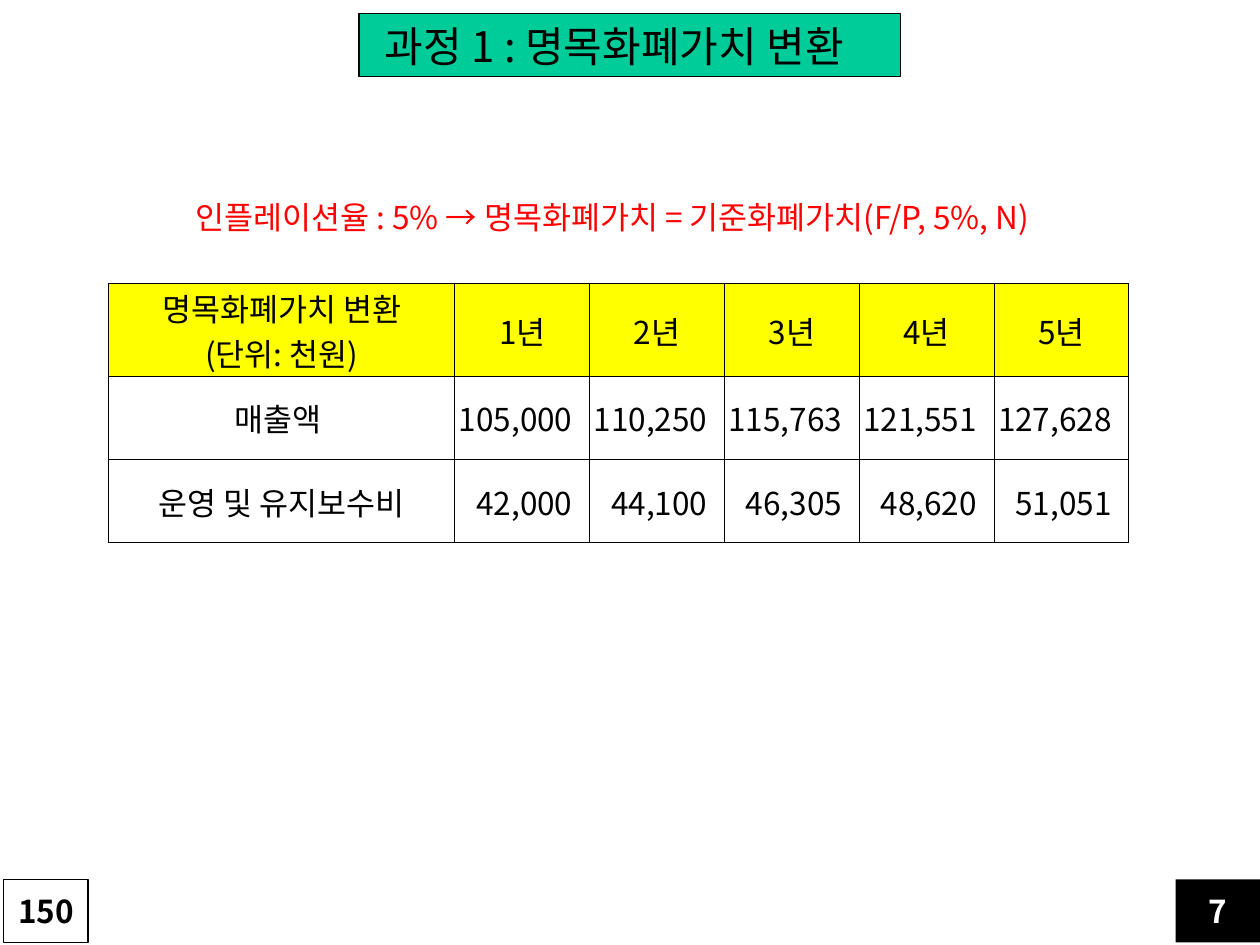
from dataclasses import dataclass
from typing import Optional

from pptx import Presentation
from pptx.dml.color import RGBColor
from pptx.enum import shapes, text
from pptx.oxml import parse_xml
from pptx.oxml.ns import nsdecls
from pptx.util import Inches, Pt


@dataclass(frozen=True)
class Theme:
    font: str = "Noto Sans CJK KR"
    black: str = "000000"
    white: str = "FFFFFF"
    red: str = "FF0000"
    green: str = "00CC99"
    yellow: str = "FFFF00"
    title_size: int = 24
    body_size: int = 18
    border: float = 0.5
    outline: float = 0.75


@dataclass(frozen=True)
class Badge:
    label: str
    left: float
    fill: str
    color: str
    line: Optional[str] = None


THEME = Theme()
CENTER = text.PP_ALIGN.CENTER
RIGHT = text.PP_ALIGN.RIGHT
MIDDLE = text.MSO_ANCHOR.MIDDLE

BADGES = [
    Badge("7", 9.33, THEME.black, THEME.white),
    Badge("150", 0.03, THEME.white, THEME.black, THEME.black),
]
HEADER = ["명목화폐가치 변환\n(단위: 천원)"] + [f"{year}년" for year in range(1, 6)]
ROWS = [
    HEADER,
    ["매출액 ", "105,000 ", "110,250 ", "115,763 ", "121,551 ", "127,628 "],
    ["운영 및 유지보수비", "42,000 ", "44,100 ", "46,305 ", "48,620 ", "51,051 "],
]
COLUMN_WIDTHS = [2.75] + [1.07] * 5
ROW_HEIGHT = 0.66


def rgb(value: str) -> RGBColor:
    return RGBColor.from_string(value)


def add_run(p, content: str, size: int, color: str, bold: bool = False) -> None:
    r = p.add_run()
    r.text = content
    r.font.size = Pt(size)
    r.font.bold = bold
    r.font.name = THEME.font
    r.font.color.rgb = rgb(color)
    r.font._element.append(
        parse_xml(f'<a:ea {nsdecls("a")} typeface="{THEME.font}"/>'))


def write(tf, content: str, size: int, color: str, align=CENTER, bold: bool = False) -> None:
    for i, line in enumerate(content.split("\n")):
        p = tf.paragraphs[0] if i == 0 else tf.add_paragraph()
        p.alignment = align
        add_run(p, line, size, color, bold)


def paint(sp, fill: str, line: Optional[str]) -> None:
    sp.fill.solid()
    sp.fill.fore_color.rgb = rgb(fill)
    if line:
        sp.line.color.rgb = rgb(line)
        sp.line.width = Pt(THEME.outline)
    else:
        sp.line.fill.background()


def place(sp, left: float, top: float, width: float, height: float) -> None:
    sp.left, sp.top = Inches(left), Inches(top)
    sp.width, sp.height = Inches(width), Inches(height)


def add_title(s) -> None:
    sp = s.shapes.title
    place(sp, 2.85, 0.11, 4.3, 0.5)
    paint(sp, THEME.green, THEME.black)
    tf = sp.text_frame
    tf.word_wrap = False
    tf.auto_size = text.MSO_AUTO_SIZE.NONE
    tf.vertical_anchor = MIDDLE
    tf.margin_right = Inches(0.35)
    write(tf, "과정 1 : 명목화폐가치 변환", THEME.title_size, THEME.black)


def add_formula(s) -> None:
    sp = s.shapes.add_textbox(Inches(1.21), Inches(1.56), Inches(7.3), Inches(0.37))
    tf = sp.text_frame
    tf.word_wrap = False
    write(tf, "인플레이션율 : 5% → 명목화폐가치 = 기준화폐가치(F/P, 5%, N)",
          THEME.body_size, THEME.red)
    tf.paragraphs[0].line_spacing = 0.9


def add_borders(cell) -> None:
    tc_pr = cell._tc.get_or_add_tcPr()
    for i, side in enumerate(("lnL", "lnR", "lnT", "lnB")):
        tc_pr.insert(i, parse_xml(
            f'<a:{side} {nsdecls("a")} w="{Pt(THEME.border)}"><a:solidFill>'
            f'<a:srgbClr val="{THEME.black}"/></a:solidFill></a:{side}>'))


def add_value_table(s) -> None:
    table = s.shapes.add_table(
        len(ROWS), len(COLUMN_WIDTHS), Inches(0.86), Inches(2.25),
        Inches(sum(COLUMN_WIDTHS)), Inches(ROW_HEIGHT * len(ROWS))).table
    for column, width in zip(table.columns, COLUMN_WIDTHS):
        column.width = Inches(width)
    for i, values in enumerate(ROWS):
        table.rows[i].height = Inches(ROW_HEIGHT)
        for j, value in enumerate(values):
            numeric = i > 0 and j > 0
            cell = table.cell(i, j)
            cell.vertical_anchor = MIDDLE
            cell.margin_left = cell.margin_top = Inches(0.01)
            cell.margin_right = Inches(0.08 if numeric else 0.01)
            cell.margin_bottom = 0
            cell.fill.solid()
            cell.fill.fore_color.rgb = rgb(THEME.white if i else THEME.yellow)
            write(cell.text_frame, value, THEME.body_size, THEME.black,
                  RIGHT if numeric else CENTER)
            add_borders(cell)


def add_badge(s, badge: Badge) -> None:
    sp = s.shapes.add_shape(shapes.MSO_SHAPE.RECTANGLE, Inches(badge.left),
                            Inches(6.98), Inches(0.67), Inches(0.5))
    sp.shadow.inherit = False
    paint(sp, badge.fill, badge.line)
    sp.text_frame.vertical_anchor = MIDDLE
    write(sp.text_frame, badge.label, THEME.body_size, badge.color, bold=True)


def main() -> None:
    prs = Presentation()
    prs.slide_width, prs.slide_height = Inches(10), Inches(7.5)
    s = prs.slides.add_slide(prs.slide_layouts[5])
    add_value_table(s)
    add_formula(s)
    add_title(s)
    for badge in BADGES:
        add_badge(s, badge)
    prs.save("out.pptx")


if __name__ == "__main__":
    main()
